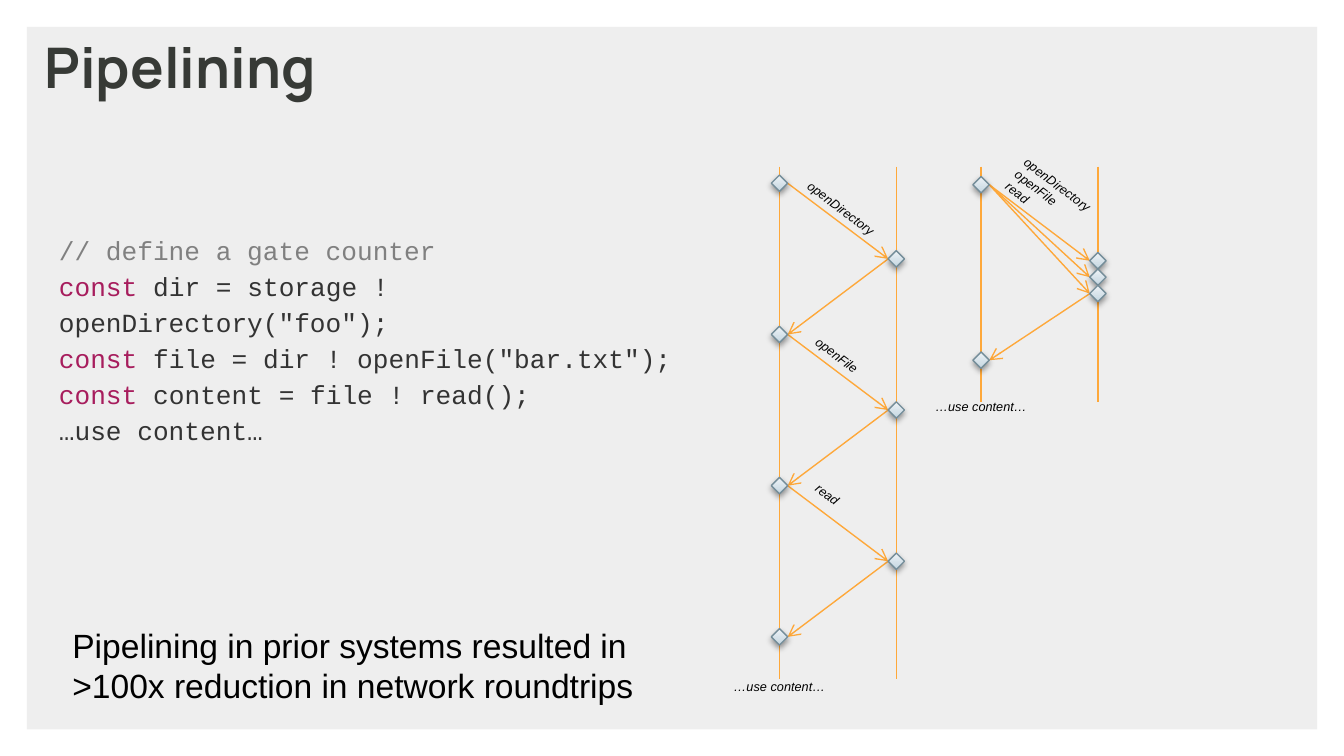
import pptx
import pptx.dml.color
import pptx.enum.shapes
import pptx.enum.text
import pptx.oxml
import pptx.oxml.ns
import pptx.util

Pt = pptx.util.Pt
RGBColor = pptx.dml.color.RGBColor
PANEL = RGBColor(0xEE, 0xEE, 0xEE)
TITLE = RGBColor(0x37, 0x3A, 0x36)
BLACK = RGBColor(0, 0, 0)
COMMENT = RGBColor(0x80, 0x80, 0x80)
KEYWORD = RGBColor(0xA7, 0x1D, 0x5D)
CODE = RGBColor(0x33, 0x33, 0x33)
ORANGE = RGBColor(0xFE, 0xA8, 0x3A)
EVENT_EDGE = RGBColor(0x74, 0x8D, 0x99)

NS = pptx.oxml.ns.nsdecls("a")
EVENT_FILL = f"""<a:gradFill {NS} rotWithShape="1"><a:gsLst>
<a:gs pos="0"><a:srgbClr val="C0D4E0"/></a:gs>
<a:gs pos="35000"><a:srgbClr val="D3E0E8"/></a:gs>
<a:gs pos="100000"><a:srgbClr val="EEF3F7"/></a:gs>
</a:gsLst><a:lin ang="16200000" scaled="0"/></a:gradFill>"""
EVENT_SHADOW = f"""<a:effectLst {NS}>
<a:outerShdw blurRad="39370" dist="20320" dir="5400000" rotWithShape="0">
<a:srgbClr val="000000"><a:alpha val="38000"/></a:srgbClr>
</a:outerShdw></a:effectLst>"""


def write(shape, lines, size, font="Arial", color=BLACK, bold=False, italic=False,
          align=pptx.enum.text.PP_ALIGN.LEFT, spacing=None, inset=None, grow=True):
    """Fill a shape with lines; a line is a string or a list of (text, color)."""
    frame = shape.text_frame
    frame.word_wrap = True
    frame.vertical_anchor = pptx.enum.text.MSO_ANCHOR.TOP
    fit = pptx.enum.text.MSO_AUTO_SIZE
    frame.auto_size = fit.SHAPE_TO_FIT_TEXT if grow else fit.NONE
    if inset is not None:
        frame.margin_left = frame.margin_right = Pt(inset)
        frame.margin_top = frame.margin_bottom = Pt(inset)
    for number, line in enumerate(lines):
        paragraph = frame.add_paragraph() if number else frame.paragraphs[0]
        paragraph.alignment = align
        paragraph.line_spacing = spacing
        for text, run_color in [(line, color)] if isinstance(line, str) else line:
            run = paragraph.add_run()
            run.text = text
            run.font.name = font
            run.font.size = Pt(size)
            run.font.bold = bold
            run.font.italic = italic
            run.font.color.rgb = run_color


presentation = pptx.Presentation()
presentation.slide_width, presentation.slide_height = Pt(720), Pt(405)
slide = presentation.slides.add_slide(presentation.slide_layouts[5])
shapes = slide.shapes

# Grey panel, behind the title
panel = shapes.add_shape(pptx.enum.shapes.MSO_SHAPE.RECTANGLE,
                         Pt(14.4), Pt(14.4), Pt(691.2), Pt(376.4))
panel.shadow.inherit = False
panel.fill.solid()
panel.fill.fore_color.rgb = PANEL
panel.line.fill.background()
panel.element.getparent().insert(2, panel.element)

# Title
title = shapes.title
title.left, title.top, title.width, title.height = Pt(16.6), Pt(10.1), Pt(647.3), Pt(38.9)
write(title, ["Pipelining"], 30, font="Manrope", color=TITLE, bold=True,
      inset=7.2, grow=False)

# Code sample
code = shapes.add_textbox(Pt(24.5), Pt(115.9), Pt(360), Pt(169.2))
write(code, [
    [("// define a gate counter", COMMENT)],
    [("const ", KEYWORD), ('dir = storage ! openDirectory("foo");', CODE)],
    [("const ", KEYWORD), ('file = dir ! openFile("bar.txt");', CODE)],
    [("const ", KEYWORD), ("content = file ! read();", CODE)],
    [("…use content…", CODE)],
], 14, font="Courier New", spacing=1.15, inset=7.2, grow=False)

# Takeaway
takeaway = shapes.add_textbox(Pt(31.7), Pt(331.2), Pt(427), Pt(51))
write(takeaway, ["Pipelining in prior systems resulted in",
                 ">100x reduction in network roundtrips"], 18)

# Sequence geometry: lifelines, events and messages
HALF = 4.4
LIFE_TOP = 89.3
client, server = 417.6, 480.2
piped_client, piped_server = 525.6, 588.2
lifelines = [(client, 363.6), (server, 363.6), (piped_client, 215.3), (piped_server, 215.3)]

round_trips = [((client, server)[i % 2], 98.2 + 40.5 * i) for i in range(7)]
request, reply = (piped_client, 99), (piped_client, 193)
arrivals = [(piped_server, y) for y in (139.7, 148.5, 157.3)]
events = round_trips + [request, reply] + arrivals
messages = list(zip(round_trips, round_trips[1:]))
messages += [(request, arrival) for arrival in arrivals] + [(arrivals[-1], reply)]

# Lifelines and message arrows
strokes = [(x, LIFE_TOP, x, bottom, False) for x, bottom in lifelines]
for (x1, y1), (x2, y2) in messages:
    gap = HALF if x2 > x1 else -HALF
    strokes.append((x1 + gap, y1, x2 - gap, y2, True))
for x1, y1, x2, y2, is_message in strokes:
    stroke = shapes.add_connector(pptx.enum.shapes.MSO_CONNECTOR.STRAIGHT,
                                  Pt(x1), Pt(y1), Pt(x2), Pt(y2))
    stroke.line.color.rgb = ORANGE
    stroke.line.width = Pt(0.75)
    properties = stroke.element.spPr
    if is_message:
        properties.get_or_add_ln().append(
            pptx.oxml.parse_xml(f'<a:tailEnd {NS} type="arrow"/>'))
    properties.append(pptx.oxml.parse_xml(f"<a:effectLst {NS}/>"))

# Event diamonds
for x, y in events:
    event = shapes.add_shape(pptx.enum.shapes.MSO_SHAPE.DIAMOND,
                             Pt(x - HALF), Pt(y - HALF), Pt(2 * HALF), Pt(2 * HALF))
    event.line.color.rgb = EVENT_EDGE
    event.line.width = Pt(0.75)
    properties = event.element.spPr
    properties.prstGeom.addnext(pptx.oxml.parse_xml(EVENT_FILL))
    properties.append(pptx.oxml.parse_xml(EVENT_SHADOW))

# Message names, slanted along the arrows
for names, left, top, height in [
    (["openDirectory"], 421.2, 107.3, 15.1),
    (["openFile"], 425.5, 190.8, 15.1),
    (["read"], 425.5, 269.3, 15.1),
    (["openDirectory", "openFile", "read"], 532.1, 92.9, 31.7),
]:
    message_name = shapes.add_textbox(Pt(left), Pt(top), Pt(67.7), Pt(height))
    message_name.rotation = 37.1
    write(message_name, names, 6.8, italic=True)

# Closing step under each client lifeline
for x, top in [(client, 360), (piped_client, 210.2)]:
    closing_step = shapes.add_textbox(Pt(x - 33.85), Pt(top), Pt(67.7), Pt(15.1))
    write(closing_step, ["…use content…"], 6.8, italic=True,
          align=pptx.enum.text.PP_ALIGN.CENTER)

presentation.save("out.pptx")
